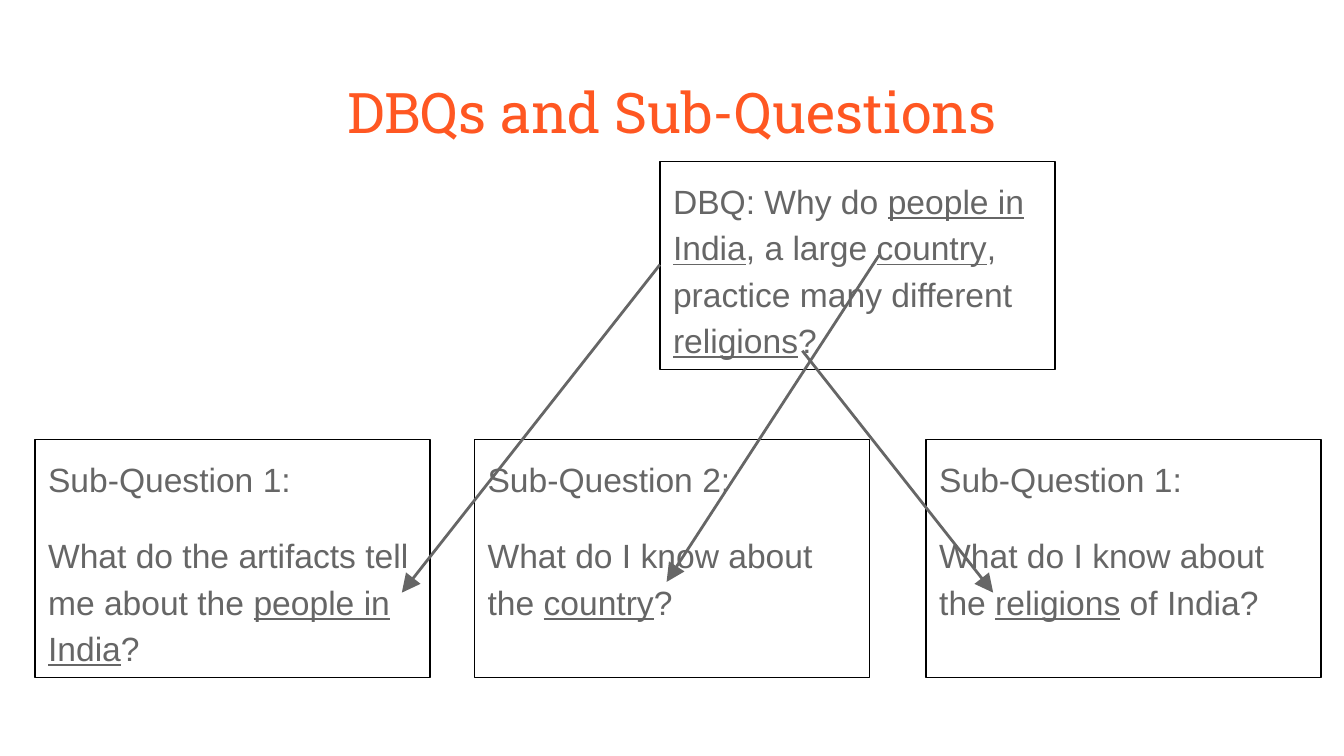
import pptx
import pptx.dml.color
import pptx.enum.shapes
import pptx.enum.text
import pptx.oxml
import pptx.oxml.ns
import pptx.util
from pptx.util import Inches

GREY = "666666"
ORANGE = "FF5722"
BLACK = "000000"
BOX_WIDTH = 2.94
SUB_QUESTION_TOP = 3.27
SUB_QUESTION_HEIGHT = 1.77

# Each paragraph is a list of (text, underlined) runs.
DBQ = [[("DBQ: Why do ", False), ("people in India", True), (", a large ", False),
        ("country", True), (", practice many different ", False),
        ("religions", True), ("?", False)]]
SUB_QUESTIONS = [
    (0.26, [[("Sub-Question 1:", False)],
            [("What do the artifacts tell me about the ", False),
             ("people in India", True), ("?", False)]]),
    (3.53, [[("Sub-Question 2:", False)],
            [("What do I know about the ", False), ("country", True), ("?", False)]]),
    (6.89, [[("Sub-Question 1:", False)],
            [("What do I know about the ", False), ("religions", True),
             (" of India?", False)]]),
]
ARROWS = [
    ((4.91, 1.97), (2.99, 4.41)),
    ((5.97, 2.61), (7.39, 4.41)),
    ((6.54, 1.9), (4.96, 4.33)),
]


def color(hex_string):
    return pptx.dml.color.RGBColor.from_string(hex_string)


def format_run(run, font_name, size, hex_string):
    run.font.name = font_name
    run.font.size = pptx.util.Pt(size)
    run.font.color.rgb = color(hex_string)


def set_up_text(text_frame):
    text_frame.word_wrap = True
    text_frame.vertical_anchor = pptx.enum.text.MSO_ANCHOR.TOP
    text_frame.margin_left = text_frame.margin_right = Inches(0.1)
    text_frame.margin_top = text_frame.margin_bottom = Inches(0.1)


def add_title(slide, left, top, width, height):
    box = slide.shapes.add_textbox(Inches(left), Inches(top), Inches(width), Inches(height))
    set_up_text(box.text_frame)
    box.text_frame.text = "DBQs and Sub-Questions"
    paragraph = box.text_frame.paragraphs[0]
    paragraph.alignment = pptx.enum.text.PP_ALIGN.CENTER
    format_run(paragraph.runs[0], "Roboto Slab", 30, ORANGE)


def add_question_box(slide, left, top, width, height, paragraphs):
    shape = slide.shapes.add_shape(
        pptx.enum.shapes.MSO_SHAPE.RECTANGLE,
        Inches(left), Inches(top), Inches(width), Inches(height))
    shape.shadow.inherit = False
    shape.fill.background()
    shape.line.color.rgb = color(BLACK)
    shape.line.width = pptx.util.Pt(0.75)
    text_frame = shape.text_frame
    set_up_text(text_frame)
    for index, runs in enumerate(paragraphs):
        paragraph = text_frame.add_paragraph() if index else text_frame.paragraphs[0]
        paragraph.alignment = pptx.enum.text.PP_ALIGN.LEFT
        paragraph.line_spacing = 1.15
        paragraph.space_after = pptx.util.Pt(16)
        for text, underlined in runs:
            run = paragraph.add_run()
            run.text = text
            run.font.underline = underlined
            format_run(run, "Arial", 18, GREY)


def add_arrow(slide, start, end):
    connector = slide.shapes.add_connector(
        pptx.enum.shapes.MSO_CONNECTOR.STRAIGHT,
        *(Inches(value) for value in (*start, *end)))
    connector.line.color.rgb = color(GREY)
    connector.line.width = pptx.util.Pt(1.5)
    line = connector.line._get_or_add_ln()
    arrowhead = pptx.oxml.parse_xml(
        f'<a:tailEnd {pptx.oxml.ns.nsdecls("a")} type="triangle" w="lg" len="lg"/>')
    line.append(arrowhead)
    line.addnext(pptx.oxml.parse_xml(f'<a:effectLst {pptx.oxml.ns.nsdecls("a")}/>'))


def main():
    presentation = pptx.Presentation()
    presentation.slide_width = Inches(10)
    presentation.slide_height = presentation.slide_width * 9 // 16
    slide = presentation.slides.add_slide(presentation.slide_layouts[6])
    add_title(slide, 0.34, 0.48, 9.32, 0.63)
    add_question_box(slide, 4.91, 1.2, BOX_WIDTH, 1.55, DBQ)
    for left, paragraphs in SUB_QUESTIONS:
        add_question_box(slide, left, SUB_QUESTION_TOP, BOX_WIDTH,
                         SUB_QUESTION_HEIGHT, paragraphs)
    for start, end in ARROWS:
        add_arrow(slide, start, end)
    presentation.save("out.pptx")


if __name__ == "__main__":
    main()
